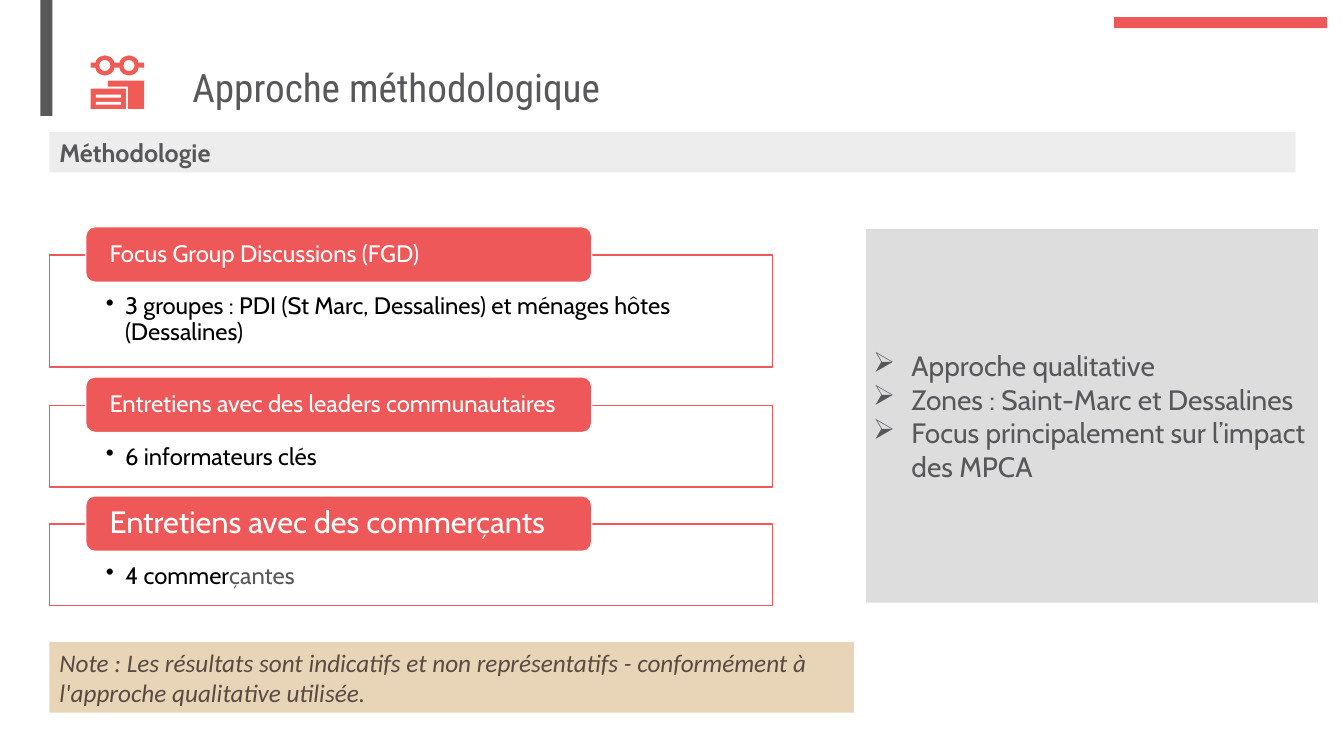
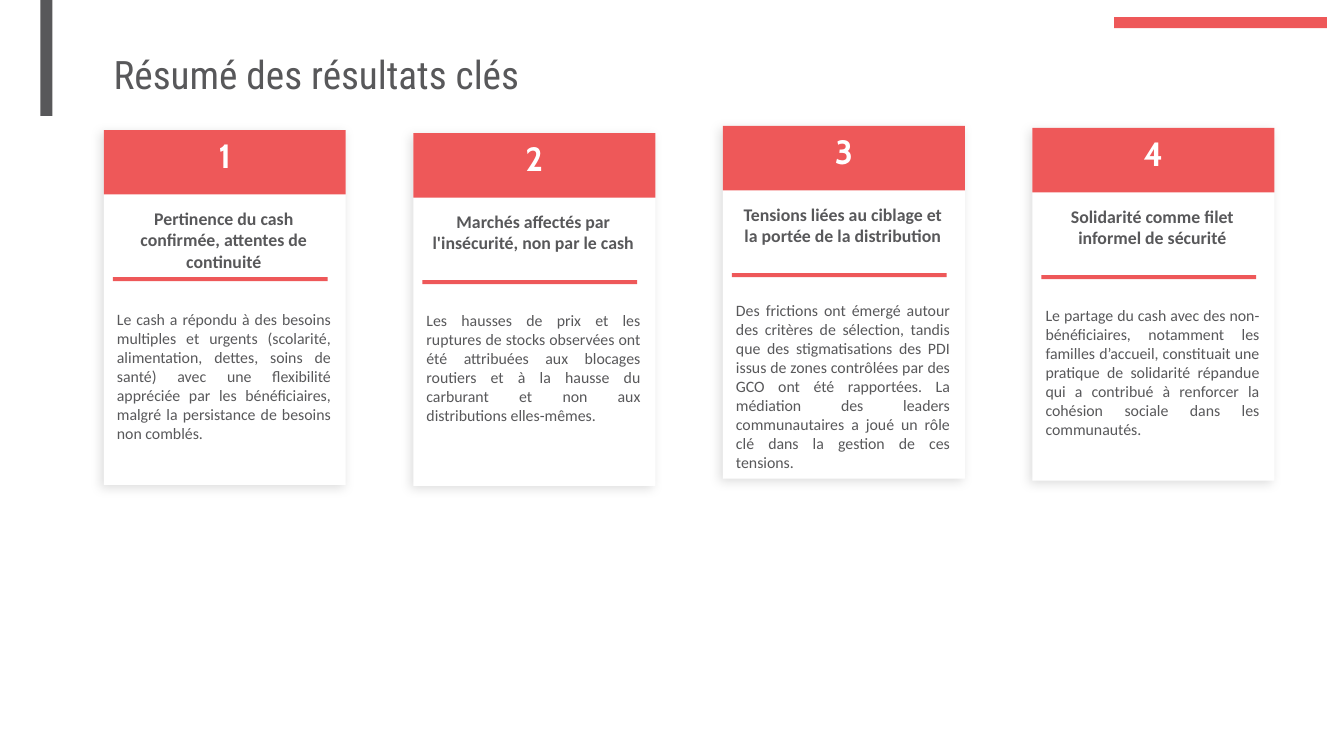
from dataclasses import dataclass

from lxml import etree
from pptx import Presentation
from pptx.dml.color import RGBColor
from pptx.enum.shapes import MSO_SHAPE
from pptx.enum.text import MSO_ANCHOR, PP_ALIGN
from pptx.oxml.ns import qn
from pptx.util import Inches, Pt

RECT, ROUND, DONUT = MSO_SHAPE.RECTANGLE, MSO_SHAPE.ROUNDED_RECTANGLE, MSO_SHAPE.DONUT
TOP, MIDDLE = MSO_ANCHOR.TOP, MSO_ANCHOR.MIDDLE
LEFT, CENTER, JUSTIFY = PP_ALIGN.LEFT, PP_ALIGN.CENTER, PP_ALIGN.JUSTIFY


@dataclass(frozen=True)
class Theme:
    # Colours
    red: str = "EE5859"
    icon: str = "F15B55"
    grey: str = "58585A"
    pale: str = "EDEDED"
    sand: str = "E8D5B7"
    brown: str = "5A4A42"
    white: str = "FFFFFF"
    black: str = "000000"
    # Fonts
    head: str = "Roboto Condensed"
    main: str = "Cabin"
    text: str = "Calibri"
    # Type sizes
    title: float = 28
    digit: float = 24
    large: float = 22
    list: float = 20
    base: float = 18
    item: float = 17
    lead: float = 12.7
    small: float = 11.3


T = Theme()


# Basic parts
def paint(shape, fill, line=None, alpha=None):
    shape.shadow.inherit = False
    shape.fill.solid()
    shape.fill.fore_color.rgb = RGBColor.from_string(fill)
    if alpha:
        color = shape.fill._xPr.find(qn("a:solidFill"))[0]
        etree.SubElement(color, qn("a:alpha"), val=str(alpha * 1000))
    if line:
        shape.line.color.rgb = RGBColor.from_string(line)
        shape.line.width = Pt(1)
    else:
        shape.line.fill.background()


def block(slide, box, fill, kind=RECT, line=None, alpha=None):
    shape = slide.shapes.add_shape(kind, *map(Inches, box))
    paint(shape, fill, line, alpha)
    return shape


def label(slide, box):
    return slide.shapes.add_textbox(*map(Inches, box))


def run(text, size, color, font=T.main, bold=False, italic=False):
    return text, size, color, font, bold, italic


def write(shape, paras, anchor=TOP, align=LEFT, inset=(0.1, 0.05, 0.1, 0.05),
          space=None, mark=None, hang=0):
    """Fill a shape with paragraphs, each a list of runs."""
    frame = shape.text_frame
    frame.word_wrap = True
    frame.vertical_anchor = anchor
    (frame.margin_left, frame.margin_top,
     frame.margin_right, frame.margin_bottom) = map(Inches, inset)
    for i, runs in enumerate(paras):
        para = frame.add_paragraph() if i else frame.paragraphs[0]
        if mark:
            props = para._p.get_or_add_pPr()
            props.set("marL", str(Inches(hang)))
            props.set("indent", str(-Inches(hang)))
            etree.SubElement(props, qn("a:buChar"), char=mark)
        para.alignment = align
        if space:
            para.line_spacing = space
        for text, size, color, font, bold, italic in runs:
            part = para.add_run()
            part.text = text
            part.font.size = Pt(size)
            part.font.name = font
            part.font.bold = bold
            part.font.italic = italic
            part.font.color.rgb = RGBColor.from_string(color)


def shade(shape):
    """Give a shape a soft drop shadow."""
    effects = shape._element.spPr.find(qn("a:effectLst"))
    outer = etree.SubElement(effects, qn("a:outerShdw"), blurRad=str(Pt(8)),
                             dist=str(Pt(3)), dir=str(135 * 60000),
                             algn="ctr", rotWithShape="0")
    color = etree.SubElement(outer, qn("a:srgbClr"), val=T.black)
    etree.SubElement(color, qn("a:alpha"), val="12000")


# Shared frame: bands and title
def start(deck, title, box):
    slide = deck.slides.add_slide(deck.slide_layouts[6])
    block(slide, (11.05, 0.17, 2.11, 0.11), T.red)
    block(slide, (0.4, 0, 0.12, 1.15), T.grey)
    write(label(slide, box), [[run(title, T.title, T.grey, T.head)]],
          MIDDLE, space=0.9)
    return slide


# Icon: glasses above two books
def icon(slide, x, y):
    for dx in (0.04, 0.28):
        lens = block(slide, (x + dx, y, 0.2, 0.2), T.icon, DONUT)
        lens.adjustments[0] = 0.22
    for dx, w in ((0, 0.06), (0.22, 0.08), (0.47, 0.06)):
        block(slide, (x + dx, y + 0.07, w, 0.05), T.icon)
    block(slide, (x, y + 0.33, 0.35, 0.2), T.icon)
    for dy in (0.39, 0.46):
        block(slide, (x + 0.05, y + dy, 0.25, 0.03), T.white)
    edge = [(0.53, 0.25), (0.53, 0.53), (0.37, 0.53), (0.37, 0.31), (0.17, 0.31)]
    pen = slide.shapes.build_freeform(Inches(x + 0.17), Inches(y + 0.25))
    pen.add_line_segments([(Inches(x + dx), Inches(y + dy)) for dx, dy in edge])
    paint(pen.convert_to_shape(), T.icon)


# Framed source with a rounded tab on its top edge
def source(slide, box, head, size, runs):
    x, y, w, h = box
    body = block(slide, box, T.white, line=T.red)
    write(body, [runs], inset=(0.56, 0.39, 0.56, 0.13), space=0.9,
          mark="•", hang=0.19)
    tab = block(slide, (x + 0.36, y - 0.28, w * 0.7, 0.55), T.red, ROUND, T.white)
    write(tab, [[run(head, size, T.white)]], MIDDLE,
          inset=(0.21, 0, 0.21, 0), space=0.9)


# Grey panel with arrow list
def panel(slide, box, lines):
    write(block(slide, box, T.grey, alpha=20),
          [[run(line, T.list, T.grey)] for line in lines],
          MIDDLE, inset=(0.07,) * 4, mark="➢", hang=0.38)


# Numbered card
def card(slide, box, digit, head, text, drop):
    x, y, w, h = box
    left, wide = x + 0.09, w - 0.2
    shade(block(slide, box, T.white))
    write(block(slide, (x, y, w, 0.64), T.red),
          [[run(digit, T.digit, T.white, bold=True)]], align=CENTER)
    write(label(slide, (left, y + 0.73, wide, 0.72)),
          [[run(head, T.lead, T.grey, T.text, bold=True)]],
          align=CENTER, inset=(0.04,) * 4)
    block(slide, (left, y + 1.46, 2.13, 0.04), T.red)
    write(label(slide, (left, y + drop, wide, 1.7)),
          [[run(text, T.small, T.grey, T.text)]],
          align=JUSTIFY, inset=(0.04,) * 4)


SOURCES = [
    (2.53, 1.11, "Focus Group Discussions (FGD)", T.item,
     [run("3 groupes : PDI (St Marc, Dessalines) et ménages hôtes (Dessalines)",
          T.item, T.black)]),
    (4.02, 0.81, "Entretiens avec des leaders communautaires", T.item,
     [run("6 informateurs clés", T.item, T.black)]),
    (5.2, 0.81, "Entretiens avec des commerçants", T.large,
     [run("4 commer", T.item, T.black), run("çantes", T.item, T.grey)]),
]

POINTS = ["Approche qualitative", "Zones : Saint-Marc et Dessalines",
          "Focus principalement sur l’impact des MPCA"]

# Top, height, text drop, heading, text
CARDS = [
    (1.29, 3.52, 1.74, "Pertinence du cash confirmée, attentes de continuité",
     "Le cash a répondu à des besoins multiples et urgents (scolarité, "
     "alimentation, dettes, soins de santé) avec une flexibilité appréciée par "
     "les bénéficiaires, malgré la persistance de besoins non comblés."),
    (1.32, 3.5, 1.72, "Marchés affectés par l'insécurité, non par le cash",
     "Les hausses de prix et les ruptures de stocks observées ont été attribuées "
     "aux blocages routiers et à la hausse du carburant et non aux distributions "
     "elles-mêmes."),
    (1.25, 3.5, 1.69, "Tensions liées au ciblage et la portée de la distribution",
     "Des frictions ont émergé autour des critères de sélection, tandis que des "
     "stigmatisations des PDI issus de zones contrôlées par des GCO ont été "
     "rapportées. La médiation des leaders communautaires a joué un rôle clé dans "
     "la gestion de ces tensions."),
    (1.27, 3.5, 1.72, "Solidarité comme filet informel de sécurité",
     "Le partage du cash avec des non-bénéficiaires, notamment les familles "
     "d’accueil, constituait une pratique de solidarité répandue qui a contribué "
     "à renforcer la cohésion sociale dans les communautés."),
]


# Slides
def method(deck):
    slide = start(deck, "Approche méthodologique", (1.81, 0.56, 8.04, 0.67))
    icon(slide, 0.9, 0.55)
    write(block(slide, (0.49, 1.31, 12.36, 0.4), T.pale),
          [[run("Méthodologie", T.base, T.grey, bold=True)]])
    for top, high, head, size, runs in SOURCES:
        source(slide, (0.49, top, 7.17, high), head, size, runs)
    panel(slide, (8.59, 2.27, 4.48, 3.71), POINTS)
    note = ("Note : Les résultats sont indicatifs et non représentatifs - "
            "conformément à l'approche qualitative utilisée.")
    write(block(slide, (0.49, 6.37, 7.98, 0.7), T.sand),
          [[run(note, T.base, T.brown, T.text, italic=True)]])


def results(deck):
    slide = start(deck, "Résumé des résultats clés", (1.03, 0.29, 11.26, 0.95))
    for i, (top, high, drop, head, text) in enumerate(CARDS):
        card(slide, (1.03 + i * 3.07, top, 2.4, high), str(i + 1), head, text, drop)


def main():
    deck = Presentation()
    deck.slide_width, deck.slide_height = Inches(13.33), Inches(7.5)
    method(deck)
    results(deck)
    deck.save("out.pptx")


if __name__ == "__main__":
    main()
